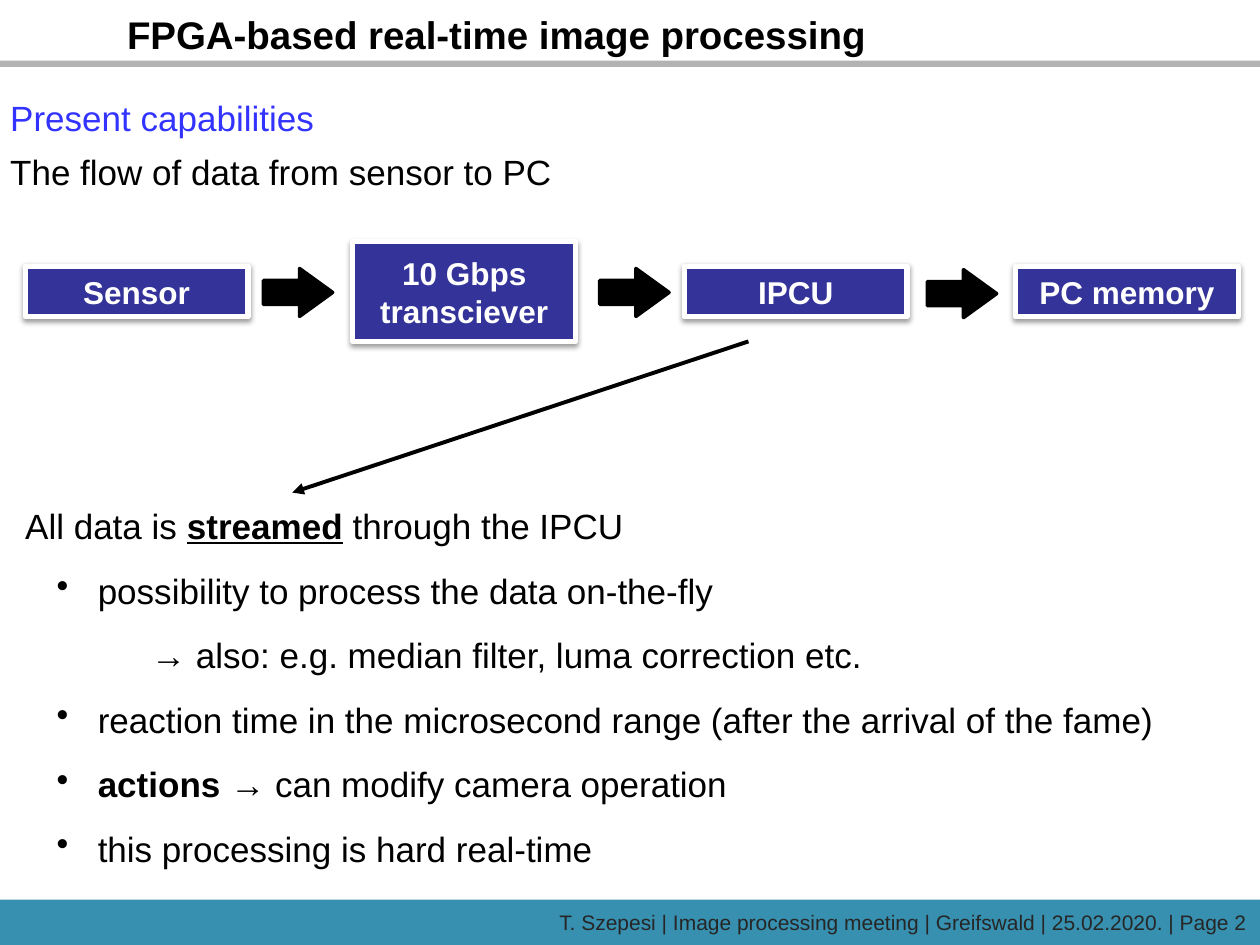
from lxml.etree import SubElement
from pptx import Presentation
from pptx.dml.color import RGBColor
from pptx.enum.shapes import MSO_CONNECTOR, MSO_SHAPE
from pptx.enum.text import MSO_ANCHOR, PP_ALIGN
from pptx.oxml import parse_xml
from pptx.oxml.ns import nsdecls, qn
from pptx.util import Pt

BLACK = RGBColor(0x00, 0x00, 0x00)
WHITE = RGBColor(0xFF, 0xFF, 0xFF)
GREY = RGBColor(0xB3, 0xB3, 0xB3)
DARK_GREY = RGBColor(0x26, 0x26, 0x26)
TEAL = RGBColor(0x37, 0x90, 0xAF)
NAVY = RGBColor(0x33, 0x33, 0x99)
BLUE = RGBColor(0x33, 0x33, 0xFF)

SHADOW = f"""<a:effectLst {nsdecls('a')}>
<a:outerShdw blurRad="39370" dist="20320" dir="5400000" rotWithShape="0">
<a:srgbClr val="000000"><a:alpha val="38000"/></a:srgbClr>
</a:outerShdw></a:effectLst>"""

deck = Presentation()
deck.slide_width, deck.slide_height = Pt(720), Pt(540)
page = deck.slides.add_slide(deck.slide_layouts[6])


def add_block(kind, left, top, width, height, fill):
    block = page.shapes.add_shape(kind, Pt(left), Pt(top), Pt(width), Pt(height))
    block.shadow.inherit = False
    block.fill.solid()
    block.fill.fore_color.rgb = fill
    block.line.fill.background()
    return block


def add_text(left, top, width, height, lines, size, color, inset=True):
    box = page.shapes.add_textbox(Pt(left), Pt(top), Pt(width), Pt(height))
    frame = box.text_frame
    frame.word_wrap = True
    if not inset:
        frame.margin_left = frame.margin_right = 0
        frame.margin_top = frame.margin_bottom = 0
    for number, line in enumerate(lines):
        para = frame.paragraphs[0] if number == 0 else frame.add_paragraph()
        for words, strong in line:
            span = para.add_run()
            span.text = words
            if strong:
                span.font.bold = True
        para.font.name = "Arial"
        para.font.size = Pt(size)
        para.font.color.rgb = color
    return frame.paragraphs


add_block(MSO_SHAPE.RECTANGLE, 0, 514.1, 720, 25.9, TEAL)
add_block(MSO_SHAPE.RECTANGLE, -1.4, 34.6, 721.4, 3.6, GREY)

footer = "T. Szepesi | Image processing meeting | Greifswald | 25.02.2020. | Page 2"
footer_paras = add_text(308.9, 516.2, 411.1, 21.6, [[(footer, False)]], 12, DARK_GREY)
footer_paras[0].alignment = PP_ALIGN.RIGHT

title = "FPGA-based real-time image processing"
add_text(65.5, 3, 466.6, 31, [[(title, True)]], 22, BLACK)

heading, subheading = add_text(
    5.8, 49, 714.2, 97.2,
    [[("Present capabilities", False)], [("The flow of data from sensor to PC", False)]],
    20, BLACK, inset=False)
heading.font.color.rgb = BLUE
heading.line_spacing = 1.25
heading.space_after = Pt(6)
subheading.line_spacing = 1.04
subheading.space_after = Pt(12)

for left, top in [(150.5, 153.4), (342.7, 153.4), (529.9, 154.1)]:
    arrow = add_block(MSO_SHAPE.RIGHT_ARROW, left, top, 39.6, 27.4, BLACK)
    arrow.adjustments[1] = 0.69
    arrow.line.color.rgb = BLACK
    arrow.line.width = Pt(2)

STAGES = [
    ("Sensor", 14.4, 28.8),
    ("10 Gbps transciever", 201.6, 56.9),
    ("IPCU", 391, 28.8),
    ("PC memory", 580.3, 28.8),
]
for label, left, height in STAGES:
    stage = add_block(MSO_SHAPE.RECTANGLE, left, 166.6 - height / 2, 127.4, height, NAVY)
    stage.line.color.rgb = WHITE
    stage.line.width = Pt(3)
    properties = stage._element.spPr
    properties.replace(properties.find(qn("a:effectLst")), parse_xml(SHADOW))
    frame = stage.text_frame
    frame.word_wrap = True
    frame.vertical_anchor = MSO_ANCHOR.MIDDLE
    para = frame.paragraphs[0]
    para.text = label
    para.alignment = PP_ALIGN.CENTER
    para.font.name = "Arial"
    para.font.size = Pt(18)
    para.font.bold = True
    para.font.color.rgb = WHITE

pointer = page.shapes.add_connector(
    MSO_CONNECTOR.STRAIGHT, Pt(427.7), Pt(195.1), Pt(167), Pt(281.5))
pointer.line.color.rgb = BLACK
pointer.line.width = Pt(2.25)
SubElement(pointer.line._get_or_add_ln(), qn("a:tailEnd"), type="triangle")
SubElement(pointer._element.spPr, qn("a:effectLst"))

STATEMENTS = [
    (0, [("All data is ", False), ("streamed", True), (" through the IPCU", False)]),
    (1, [("possibility to process the data on-the-fly", False)]),
    (2, [("→ also: e.g. median filter, luma correction etc.", False)]),
    (1, [("reaction time in the microsecond range (after the arrival of the fame)", False)]),
    (1, [("actions ", True), ("→ can modify camera operation", False)]),
    (1, [("this processing is hard real-time", False)]),
]
statement_paras = add_text(
    14.4, 287.3, 693.4, 205.9, [line for level, line in STATEMENTS], 20, BLACK, inset=False)
for para, (level, line) in zip(statement_paras, STATEMENTS):
    para.level = level
    para.line_spacing = 1.04
    para.space_after = Pt(12)
    layout = para._p.get_or_add_pPr()
    if level == 1:
        layout.set("marL", str(Pt(41.5)))
        layout.set("indent", str(Pt(-23.5)))
        bullet = parse_xml(f'<a:buChar {nsdecls("a")} char="•"/>')
        layout.insert_element_before(bullet, "a:tabLst", "a:defRPr", "a:extLst")
    elif level == 2:
        layout.set("marL", str(Pt(72)))
        layout.set("indent", "0")
statement_paras[0].runs[1].font.underline = True

deck.save("out.pptx")
